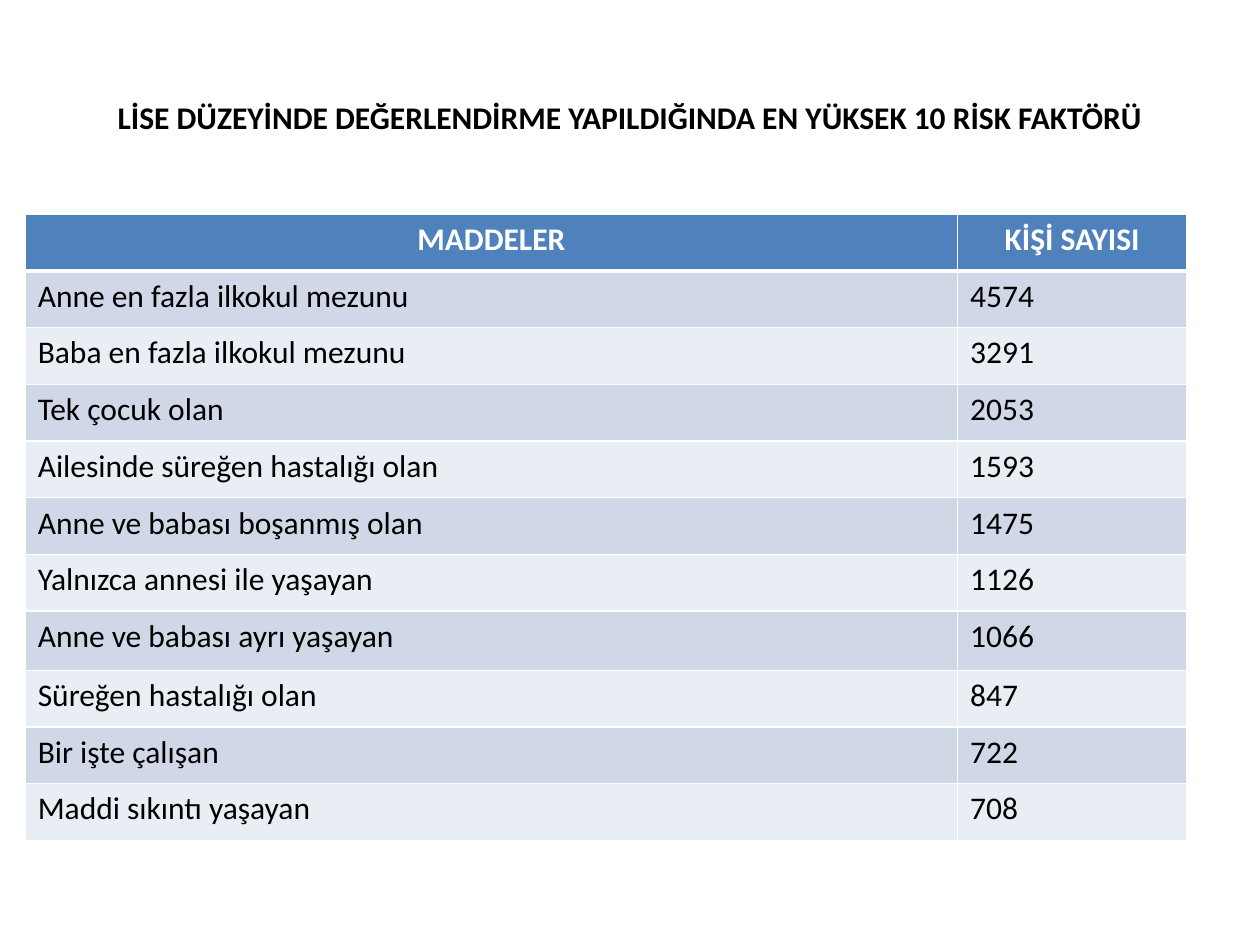
from lxml import etree
from pptx import Presentation
from pptx.dml.color import RGBColor
from pptx.enum import text
from pptx.oxml import ns
from pptx.util import Inches, Pt

BLACK = RGBColor(0x00, 0x00, 0x00)
WHITE = RGBColor(0xFF, 0xFF, 0xFF)
HEADER_BLUE = RGBColor(0x4F, 0x81, 0xBD)
BANDS = [RGBColor(0xE9, 0xED, 0xF4), RGBColor(0xD0, 0xD8, 0xE8)]

HEADING = "LİSE DÜZEYİNDE DEĞERLENDİRME YAPILDIĞINDA EN YÜKSEK 10 RİSK FAKTÖRÜ"
RISKS = [
    ("MADDELER", "KİŞİ SAYISI"),
    ("Anne en fazla ilkokul mezunu", "4574"),
    ("Baba en fazla ilkokul mezunu", "3291"),
    ("Tek çocuk olan", "2053"),
    ("Ailesinde süreğen hastalığı olan", "1593"),
    ("Anne ve babası boşanmış olan", "1475"),
    ("Yalnızca annesi ile yaşayan", "1126"),
    ("Anne ve babası ayrı yaşayan", "1066"),
    ("Süreğen hastalığı olan", "847"),
    ("Bir işte çalışan", "722"),
    ("Maddi sıkıntı yaşayan", "708"),
]
COLUMN_WIDTHS = [7.4, 1.82]
ROW_HEIGHTS = [0.45] * 7 + [0.47] + [0.45] * 3


def write(frame, words, color, bold, align):
    paragraph = frame.paragraphs[0]
    paragraph.alignment = align
    run = paragraph.add_run()
    run.text = words
    run.font.color.rgb = color
    for name, value in {"name": "Calibri", "size": Pt(18), "bold": bold}.items():
        setattr(run.font, name, value)


def add_borders(cell, widths):
    """Draw white cell borders; widths maps a side (L, R, T, B) to points."""
    properties = cell._tc.get_or_add_tcPr()
    for side, width in widths.items():
        line = etree.SubElement(properties, ns.qn(f"a:ln{side}"), w=str(Pt(width)))
        fill = etree.SubElement(line, ns.qn("a:solidFill"))
        etree.SubElement(fill, ns.qn("a:srgbClr"), val=str(WHITE))


deck = Presentation()
deck.slide_width, deck.slide_height = Inches(10), Inches(7.5)
slide = deck.slides.add_slide(deck.slide_layouts[6])

risk_table = slide.shapes.add_table(
    len(RISKS), len(COLUMN_WIDTHS), Inches(0.2), Inches(1.7),
    Inches(sum(COLUMN_WIDTHS)), Inches(sum(ROW_HEIGHTS))).table
for column, width in zip(risk_table.columns, COLUMN_WIDTHS):
    column.width = Inches(width)
for row, height in zip(risk_table.rows, ROW_HEIGHTS):
    row.height = Inches(height)

for row_index, entries in enumerate(RISKS):
    is_header = row_index == 0
    top = 3 if row_index == 1 else 1
    bottom = 3 if is_header else 1
    for column_index, entry in enumerate(entries):
        cell = risk_table.cell(row_index, column_index)
        add_borders(cell, {"L": 1, "R": 1, "T": top, "B": bottom})
        cell.fill.solid()
        cell.fill.fore_color.rgb = HEADER_BLUE if is_header else BANDS[row_index % 2]
        write(cell.text_frame, entry, WHITE if is_header else BLACK, is_header,
              text.PP_ALIGN.CENTER if is_header else text.PP_ALIGN.LEFT)

heading = slide.shapes.add_textbox(Inches(0.5), Inches(0.3), Inches(9), Inches(1.25)).text_frame
heading.word_wrap = True
heading.vertical_anchor = text.MSO_ANCHOR.MIDDLE
write(heading, HEADING, BLACK, True, text.PP_ALIGN.CENTER)

deck.save("out.pptx")
